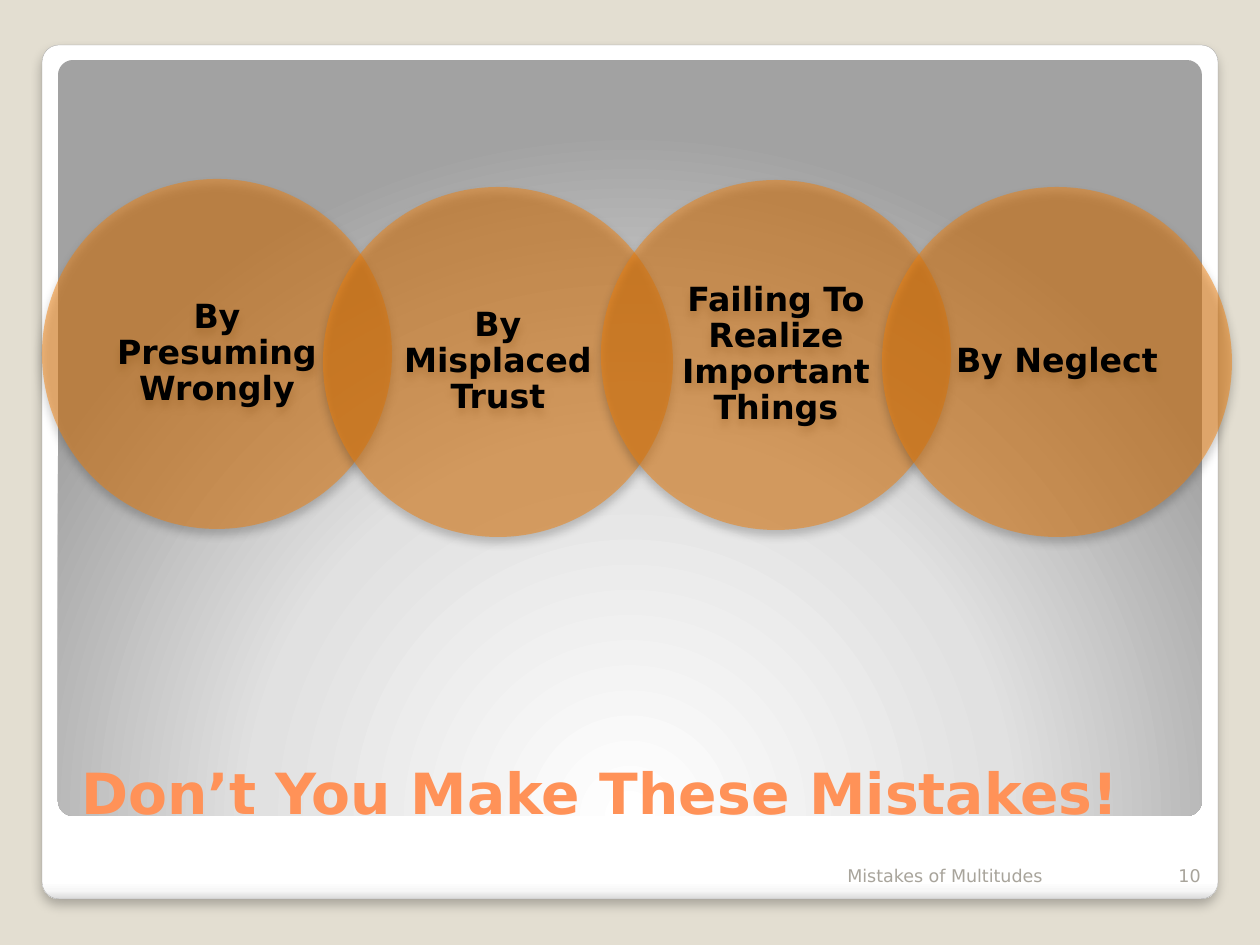
from dataclasses import dataclass

from lxml import etree
from pptx import Presentation
from pptx import util as u
from pptx.dml.color import RGBColor
from pptx.enum import shapes, text
from pptx.oxml import parse_xml
from pptx.oxml.ns import nsdecls, qn

PX = 914400 / 126
FONT = "DejaVu Sans"
BACKGROUND = RGBColor(0xE3, 0xDE, 0xD1)
FRAME_LINE = RGBColor(0xA4, 0xA4, 0xA4)
ORANGE = RGBColor(0xF0, 0x7F, 0x09)
BLACK = RGBColor(0, 0, 0)
FOOTER = RGBColor(0xA8, 0xA4, 0x9B)
TITLE = RGBColor(0xFF, 0x92, 0x58)
DIAMETER = 350

LINEAR = '<a:lin ang="5400000" scaled="0"/>'
RADIAL = ('<a:path path="circle"><a:fillToRect l="50000" t="175000" '
          'r="50000" b="-75000"/></a:path>')


@dataclass
class Circle:
    label: str
    x: int
    y: int


@dataclass
class Label:
    label: str
    box: tuple[int, int, int, int]
    size: float
    color: RGBColor
    bold: bool = False
    align: text.PP_ALIGN = text.PP_ALIGN.LEFT


CIRCLES = [
    Circle("By Presuming Wrongly", 42, 179),
    Circle("By Misplaced Trust", 323, 187),
    Circle("Failing To Realize Important Things", 601, 180),
    Circle("By Neglect", 882, 187),
]
LABELS = [
    Label("Mistakes of Multitudes", (835, 842, 315, 50), 10, FOOTER),
    Label("10", (1150, 842, 63, 50), 10, FOOTER, align=text.PP_ALIGN.RIGHT),
    Label("Don’t You Make These Mistakes!", (69, 687, 1128, 145), 32.4, TITLE, bold=True),
]


def px(n: float) -> u.Emu:
    return u.Emu(round(n * PX))


def add_shape(slide, kind, box: tuple[int, int, int, int]):
    sp = slide.shapes.add_shape(kind, *map(px, box))
    sp.shadow.inherit = False
    sp.line.fill.background()
    return sp


def set_gradient(sp, stops: list[tuple[int, str]], direction: str) -> None:
    sp.fill.background()
    gs = "".join(f'<a:gs pos="{pos * 1000}"><a:srgbClr val="{color}"/></a:gs>'
                 for pos, color in stops)
    grad = parse_xml(f'<a:gradFill {nsdecls("a")} rotWithShape="1">'
                     f'<a:gsLst>{gs}</a:gsLst>{direction}</a:gradFill>')
    spPr = sp.element.spPr
    spPr.replace(spPr.find(qn("a:noFill")), grad)


def add_shadow(sp, alpha: int, blur: float, dist: float) -> None:
    effects = sp.element.spPr.find(qn("a:effectLst"))
    effects.append(parse_xml(
        f'<a:outerShdw {nsdecls("a")} blurRad="{u.Pt(blur)}" dist="{u.Pt(dist)}" '
        f'dir="5400000" algn="tl" rotWithShape="0"><a:srgbClr val="000000">'
        f'<a:alpha val="{alpha * 1000}"/></a:srgbClr></a:outerShdw>'))


def set_text(sp, label: str, size: float, color: RGBColor, bold: bool,
             align: text.PP_ALIGN, anchor: text.MSO_ANCHOR):
    tf = sp.text_frame
    tf.word_wrap = True
    tf.vertical_anchor = anchor
    p = tf.paragraphs[0]
    p.text = label
    p.alignment = align
    font = p.runs[0].font
    font.name, font.size, font.bold = FONT, u.Pt(size), bold
    font.color.rgb = color
    return tf


def add_circle(slide, circle: Circle) -> None:
    sp = add_shape(slide, shapes.MSO_SHAPE.OVAL, (circle.x, circle.y, DIAMETER, DIAMETER))
    sp.fill.solid()
    sp.fill.fore_color.rgb = ORANGE
    color = sp.element.spPr.find(qn("a:solidFill"))[0]
    etree.SubElement(color, qn("a:alpha"), val="50000")
    add_shadow(sp, 40, 5.2, 3)
    tf = set_text(sp, circle.label, 19, BLACK, True,
                  text.PP_ALIGN.CENTER, text.MSO_ANCHOR.MIDDLE)
    tf.margin_left = tf.margin_right = u.Inches(0.15)
    tf.margin_top = tf.margin_bottom = u.Inches(0.03)
    tf.paragraphs[0].line_spacing = 0.9


def add_label(slide, item: Label) -> None:
    sp = slide.shapes.add_textbox(*map(px, item.box))
    set_text(sp, item.label, item.size, item.color, item.bold,
             item.align, text.MSO_ANCHOR.BOTTOM)


def main() -> None:
    prs = Presentation()
    prs.slide_width, prs.slide_height = px(1260), px(945)
    slide = prs.slides.add_slide(prs.slide_layouts[6])
    slide.background.fill.solid()
    slide.background.fill.fore_color.rgb = BACKGROUND

    # White frame and grey panel
    rounded = shapes.MSO_SHAPE.ROUNDED_RECTANGLE
    frame = add_shape(slide, rounded, (42, 45, 1176, 854))
    set_gradient(frame, [(0, "FFFFFF"), (98, "FFFFFF"), (99, "F7F7F7"), (100, "DADADA")], LINEAR)
    frame.line.color.rgb = FRAME_LINE
    frame.line.width = u.Pt(0.16)
    add_shadow(frame, 25, 6, 4)
    panel = add_shape(slide, rounded, (58, 60, 1144, 756))
    set_gradient(panel, [(0, "FFFFFF"), (55, "E1E1E1"), (100, "A2A2A2")], RADIAL)
    for sp in (frame, panel):
        sp.adjustments[0] = 0.02

    # Overlapping circles
    for circle in CIRCLES:
        add_circle(slide, circle)

    # Footer, slide number and title
    for item in LABELS:
        add_label(slide, item)

    prs.save("out.pptx")


if __name__ == "__main__":
    main()
